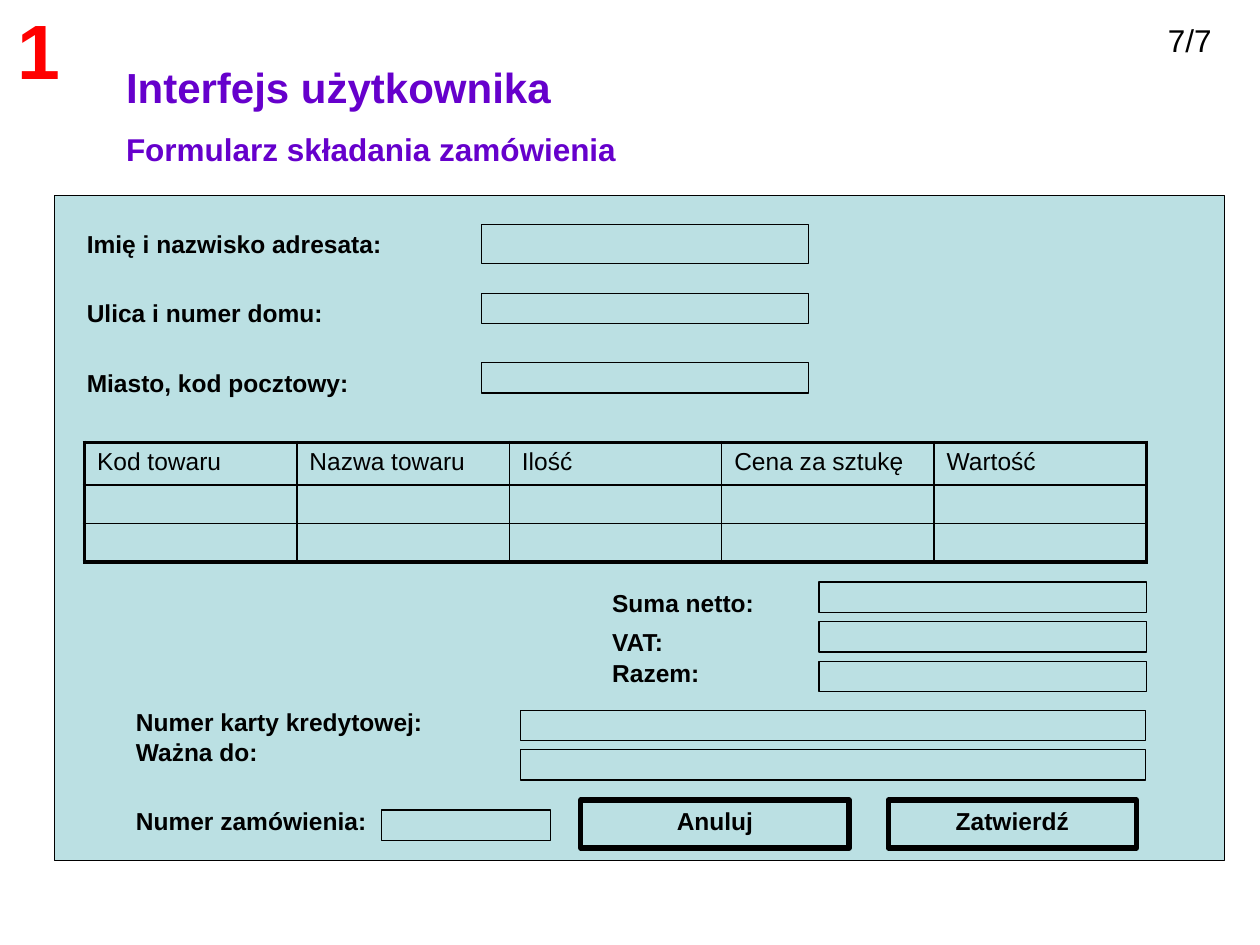
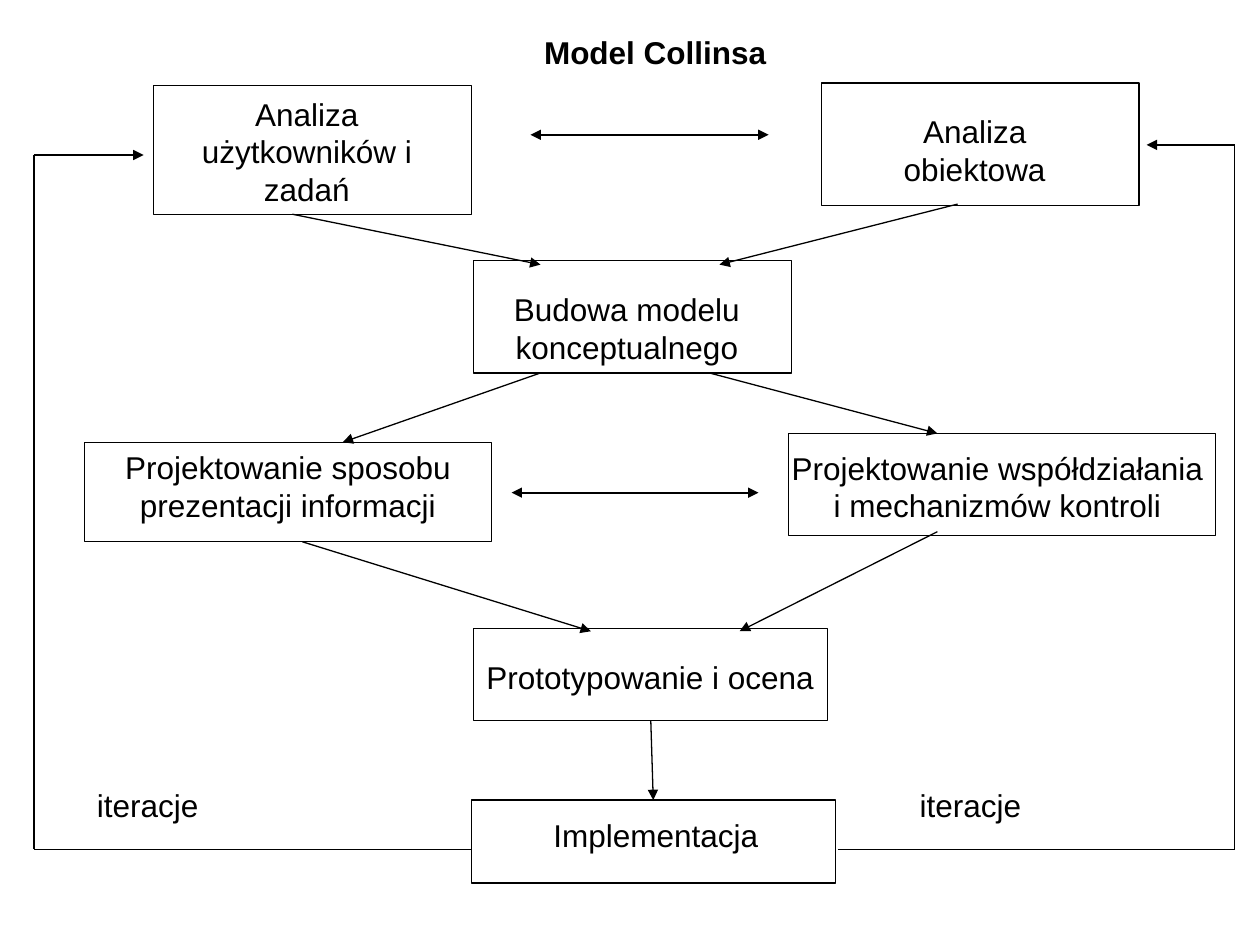
from itertools import pairwise

from lxml import etree
from pptx import Presentation
from pptx import util as u
from pptx.dml.color import RGBColor
from pptx.enum import shapes, text
from pptx.oxml.ns import qn

WIDTH, HEIGHT = u.Inches(10), u.Inches(7.5)
COL, ROW = WIDTH / 100, HEIGHT / 75
BLACK = RGBColor(0x00, 0x00, 0x00)
RED = RGBColor(0xFF, 0x00, 0x00)
VIOLET = RGBColor(0x66, 0x00, 0xCC)
PANEL = RGBColor(0xBB, 0xE0, 0xE3)
FONT = "Arial"
LEFT, CENTER = text.PP_ALIGN.LEFT, text.PP_ALIGN.CENTER
BOTTOM_SIDE, TOP_SIDE = 2, 0


def area(left, top, width, height):
    """Turn grid columns and rows into a shape's position and size."""
    return tuple(u.Emu(round(n)) for n in (left * COL, top * ROW, width * COL, height * ROW))


def add_run(p, content, size, bold=False, color=BLACK):
    """Add one formatted run to a paragraph."""
    r = p.add_run()
    r.text = content
    r.font.name, r.font.size, r.font.bold = FONT, u.Pt(size), bold
    r.font.color.rgb = color


def prepare_frame(tf, align):
    """Make a text frame wrap, start at the top and keep its size."""
    tf.word_wrap = True
    tf.auto_size = text.MSO_AUTO_SIZE.NONE
    tf.vertical_anchor = text.MSO_ANCHOR.TOP
    tf.paragraphs[0].alignment = align
    return tf.paragraphs[0]


def set_title(s, place, lines, align, color):
    """Place the title and write its lines, each given with its size."""
    sp = s.shapes.title
    sp.left, sp.top, sp.width, sp.height = area(*place)
    tf = sp.text_frame
    p = prepare_frame(tf, align)
    for i, (content, size) in enumerate(lines):
        if i:
            p = tf.add_paragraph()
            p.alignment = align
            p.space_before = u.Pt(10)
        add_run(p, content, size, True, color)


def add_label(s, place, content, size=14, bold=True, color=BLACK):
    """Add a left-aligned text box."""
    tf = s.shapes.add_textbox(*area(*place)).text_frame
    add_run(prepare_frame(tf, LEFT), content, size, bold, color)


def add_box(s, place, fill=None, weight=0.75):
    """Add an outlined rectangle, filled when a colour is given."""
    sp = s.shapes.add_shape(shapes.MSO_SHAPE.RECTANGLE, *area(*place))
    sp.shadow.inherit = False
    sp.line.color.rgb = BLACK
    sp.line.width = u.Pt(weight)
    if fill is None:
        sp.fill.background()
    else:
        sp.fill.solid()
        sp.fill.fore_color.rgb = fill
    return sp


def add_button(s, place, content):
    """Add a thickly outlined form button."""
    tf = add_box(s, place, weight=3).text_frame
    add_run(prepare_frame(tf, CENTER), content, 14, True)


def add_stage(s, place, content, insets):
    """Add a process box; insets are left, top and right."""
    sp = add_box(s, place)
    tf = sp.text_frame
    tf.margin_left, tf.margin_top, tf.margin_right, _ = area(*insets, 0)
    tf.margin_bottom = 0
    add_run(prepare_frame(tf, CENTER), content, 18)
    return sp


def add_line(s, start, end, ends=("tailEnd",), weight=0.75):
    """Draw a straight line with arrowheads at the named ends."""
    points = area(*start, *end)
    cx = s.shapes.add_connector(shapes.MSO_CONNECTOR.STRAIGHT, *points)
    cx.line.color.rgb = BLACK
    cx.line.width = u.Pt(weight)
    ln = cx.line._get_or_add_ln()
    for name in ends:
        etree.SubElement(ln, qn(f"a:{name}"), type="triangle")
    etree.SubElement(cx._element.spPr, qn("a:effectLst"))
    return cx


def add_loop(s, points):
    """Draw an iteration path whose last stretch has the arrowhead."""
    stretches = list(pairwise(points))
    for start, end in stretches[:-1]:
        add_line(s, start, end, ())
    add_line(s, *stretches[-1])


def set_border(cell, side, weight):
    """Draw one border of a table cell."""
    ln = etree.SubElement(cell._tc.get_or_add_tcPr(), qn(f"a:ln{side}"), w=str(u.Pt(weight)))
    fill = etree.SubElement(ln, qn("a:solidFill"))
    etree.SubElement(fill, qn("a:srgbClr"), val=str(BLACK))


def add_goods_table(s, place, headers, heights):
    """Add the ordered goods table with a thick outer frame."""
    table = s.shapes.add_table(len(heights), len(headers), *area(*place)).table
    table.first_row = table.horz_banding = False
    last_row, last_col = len(heights) - 1, len(headers) - 1
    for i, height in enumerate(heights):
        table.rows[i].height = u.Emu(round(height * ROW))
        for j, header in enumerate(headers):
            cell = table.cell(i, j)
            outer = {"L": j == 0, "R": j == last_col, "T": i == 0, "B": i == last_row}
            for side, thick in outer.items():
                set_border(cell, side, 2.25 if thick else 1)
            cell.fill.background()
            if i == 0:
                add_run(cell.text_frame.paragraphs[0], header, 14)
            else:
                cell.margin_top = cell.margin_bottom = 0


def build_form(s):
    """Build the order form slide."""
    set_title(s, (9, 4.4, 74, 9.5),
              [("Interfejs użytkownika", 24), ("Formularz składania zamówienia", 18)],
              LEFT, VIOLET)
    add_box(s, (4.3, 15.5, 92.9, 52.8), PANEL)
    address = ["Imię i nazwisko adresata:", "Ulica i numer domu:", "Miasto, kod pocztowy:"]
    for i, name in enumerate(address):
        add_label(s, (5.9, 17.7 + 5.5 * i, 28.5, 3.3), name)
        add_box(s, (38.2, 17.8 + 5.5 * i, 26, 2.4 if i else 3.1), PANEL)
    add_goods_table(s, (6.7, 35.1, 84.3, 9),
                    ["Kod towaru", "Nazwa towaru", "Ilość", "Cena za sztukę", "Wartość"],
                    [3.4, 2.8, 2.8])
    for i, (name, top) in enumerate([("Suma netto:", 46.2), ("VAT:", 49.3), ("Razem:", 51.7)]):
        add_label(s, (47.6, top, 28.1, 3.3), name)
        add_box(s, (65, 46.2 + 3.15 * i, 26, 2.4), PANEL)
    for i, name in enumerate(["Numer karty kredytowej:", "Ważna do:"]):
        add_label(s, (9.8, 55.6 + 2.4 * i, 28.1, 3.3), name)
        add_box(s, (41.3, 56.4 + 3.1 * i, 49.6, 2.4), PANEL)
    add_label(s, (9.8, 63.5, 22, 3.3), "Numer zamówienia:")
    add_box(s, (30.3, 64.3, 13.4, 2.4), PANEL)
    add_button(s, (46.1, 63.5, 21.3, 3.8), "Anuluj")
    add_button(s, (70.5, 63.5, 19.7, 3.8), "Zatwierdź")
    add_label(s, (0.4, -0.3, 5.5, 8.4), "1", 44, color=RED)
    add_label(s, (91.7, 1.2, 7.1, 4), "7/7", 18, False)


def build_model(s):
    """Build the process model slide."""
    set_title(s, (20.9, 2.1, 62.2, 4), [("Model Collinsa", 18)], CENTER, BLACK)
    add_stage(s, (12.2, 6.8, 25.2, 10.2), "Analiza użytkowników i zadań", (2.4, 0.7, 3.3))
    add_stage(s, (65.2, 6.6, 25.2, 9.7), "Analiza obiektowa", (2.4, 2.3, 3.3))
    add_stage(s, (37.6, 20.7, 25.2, 8.9), "Budowa modelu konceptualnego", (2.4, 2.3, 3.3))
    add_stage(s, (6.7, 35.1, 32.3, 7.9), "Projektowanie sposobu prezentacji informacji",
              (1.8, 0.5, 1.8))
    add_stage(s, (62.6, 34.4, 33.9, 8.1),
              "Projektowanie współdziałania i mechanizmów kontroli", (0, 1.2, 0.8))
    prototype = add_stage(s, (37.6, 49.9, 28.1, 7.3), "Prototypowanie i ocena", (0.8, 2.3, 0.9))
    delivery = add_stage(s, (37.4, 63.5, 28.9, 6.6), "Implementacja", (4.9, 1.3, 4.5))

    for start, end in [((42.1, 10.7), (61, 10.7)), ((40.6, 39.1), (60.2, 39.1))]:
        add_line(s, start, end, ("headEnd", "tailEnd"), 1)
    flow = [((23.2, 17), (42.9, 21)), ((76, 16.2), (57.1, 21)),
            ((42.9, 29.6), (27.2, 35.1)), ((56.3, 29.6), (74.4, 34.4)),
            ((24, 43), (46.9, 50.1)), ((74.4, 42.2), (58.7, 50.1))]
    for start, end in flow:
        add_line(s, start, end)
    cx = add_line(s, (51.6, 57.2), (51.6, 63.5))
    cx.begin_connect(prototype, BOTTOM_SIDE)
    cx.end_connect(delivery, TOP_SIDE)

    add_loop(s, [(37.4, 67.4), (2.7, 67.4), (2.7, 12.3), (11.4, 12.3)])
    add_loop(s, [(66.5, 67.4), (98, 67.4), (98, 11.5), (91, 11.5)])
    for left in (6.7, 72):
        add_label(s, (left, 61.9, 22.8, 4), "iteracje", 18, False)


def main():
    """Build and save the presentation."""
    prs = Presentation()
    prs.slide_width, prs.slide_height = WIDTH, HEIGHT
    for build in (build_form, build_model):
        build(prs.slides.add_slide(prs.slide_layouts[5]))
    prs.save("out.pptx")


if __name__ == "__main__":
    main()
